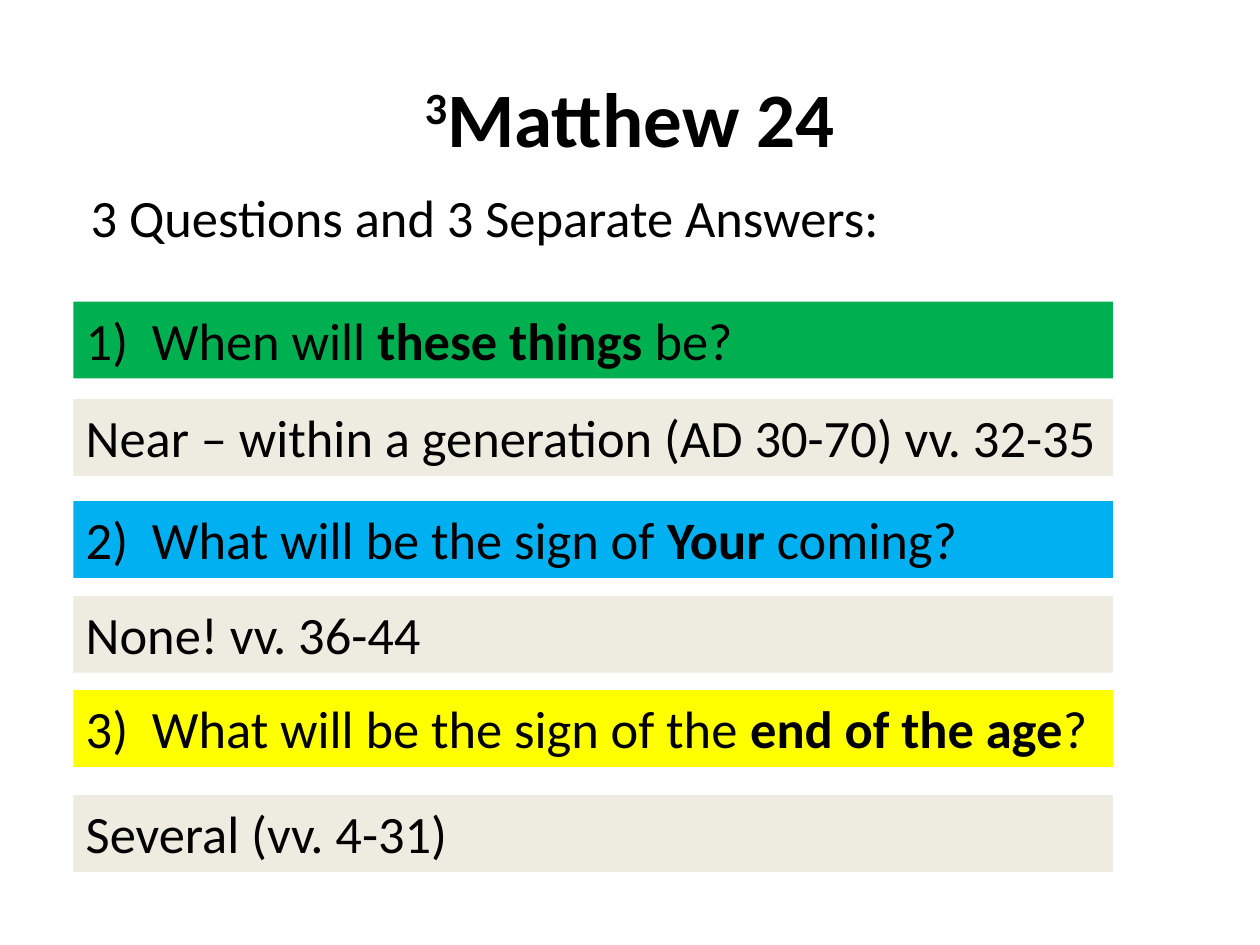
from dataclasses import dataclass
from typing import Any

from lxml.etree import SubElement
from pptx import Presentation
from pptx.dml.color import RGBColor
from pptx.enum.text import MSO_ANCHOR, MSO_AUTO_SIZE, PP_ALIGN
from pptx.oxml.ns import qn
from pptx.util import Pt


@dataclass(frozen=True)
class Theme:
    font: str = "Calibri"
    ink: str = "000000"
    answer: str = "EEECE1"
    near: str = "00B050"
    coming: str = "00B0F0"
    end: str = "FFFF00"
    title_size: float = 44
    text_size: float = 30


@dataclass(frozen=True)
class Span:
    text: str
    bold: bool = False
    baseline: int = 0


@dataclass(frozen=True)
class Bar:
    top: float
    fill: str
    spans: tuple[Span, ...]


THEME = Theme()
BAR_LEFT, BAR_WIDTH, BAR_HEIGHT = 41.9, 594, 43.8

BARS = (
    Bar(172.4, THEME.near,
        (Span("1)  When will "), Span("these things ", bold=True), Span("be?"))),
    Bar(228.1, THEME.answer,
        (Span("Near – within a generation (AD 30-70) vv. 32-35"),)),
    Bar(286.4, THEME.coming,
        (Span("2)  What will be the sign of "), Span("Your", bold=True), Span(" coming?"))),
    Bar(340.6, THEME.answer, (Span("None! vv. 36-44"),)),
    Bar(394.4, THEME.end,
        (Span("3)  What will be the sign of the "), Span("end of the age", bold=True), Span("?"))),
    Bar(454.4, THEME.answer, (Span("Several (vv. 4-31)"),)),
)


def set_values(target: Any, values: dict[str, Any]) -> None:
    for name, value in values.items():
        setattr(target, name, value)


def place(box: Any, left: float, top: float, width: float, height: float) -> None:
    set_values(box, {"left": Pt(left), "top": Pt(top),
                     "width": Pt(width), "height": Pt(height)})


def write_spans(para: Any, spans: tuple[Span, ...], size: float) -> None:
    for span in spans:
        run = para.add_run()
        run.text = span.text
        set_values(run.font, {"name": THEME.font, "size": Pt(size), "bold": span.bold})
        run.font.color.rgb = RGBColor.from_string(THEME.ink)
        if span.baseline:
            run.font._element.set("baseline", str(span.baseline))


def fill_title(box: Any) -> None:
    place(box, 36, 21.6, 648, 90)
    box.text_frame.vertical_anchor = MSO_ANCHOR.MIDDLE
    para = box.text_frame.paragraphs[0]
    para.alignment = PP_ALIGN.CENTER
    write_spans(para, (Span("3", bold=True, baseline=30000), Span("Matthew 24", bold=True)),
                THEME.title_size)


def fill_body(box: Any) -> None:
    place(box, 36, 102.2, 600, 420)
    para = box.text_frame.paragraphs[0]
    properties = para._p.get_or_add_pPr()
    properties.set("marL", str(Pt(8.64)))
    properties.set("indent", "0")
    SubElement(properties, qn("a:buNone"))
    write_spans(para, (Span("3 Questions and 3 Separate Answers:"),), THEME.text_size)


def draw_bar(page: Any, bar: Bar) -> None:
    box = page.shapes.add_textbox(Pt(BAR_LEFT), Pt(bar.top), Pt(BAR_WIDTH), Pt(BAR_HEIGHT))
    box.fill.solid()
    box.fill.fore_color.rgb = RGBColor.from_string(bar.fill)
    set_values(box.text_frame, {"word_wrap": True,
                                "auto_size": MSO_AUTO_SIZE.SHAPE_TO_FIT_TEXT})
    write_spans(box.text_frame.paragraphs[0], bar.spans, THEME.text_size)


def main() -> None:
    deck = Presentation()
    set_values(deck, {"slide_width": Pt(720), "slide_height": Pt(540)})
    page = deck.slides.add_slide(deck.slide_layouts[1])
    fill_title(page.shapes.title)
    fill_body(page.placeholders[1])
    for bar in BARS:
        draw_bar(page, bar)
    deck.save("out.pptx")


if __name__ == "__main__":
    main()
